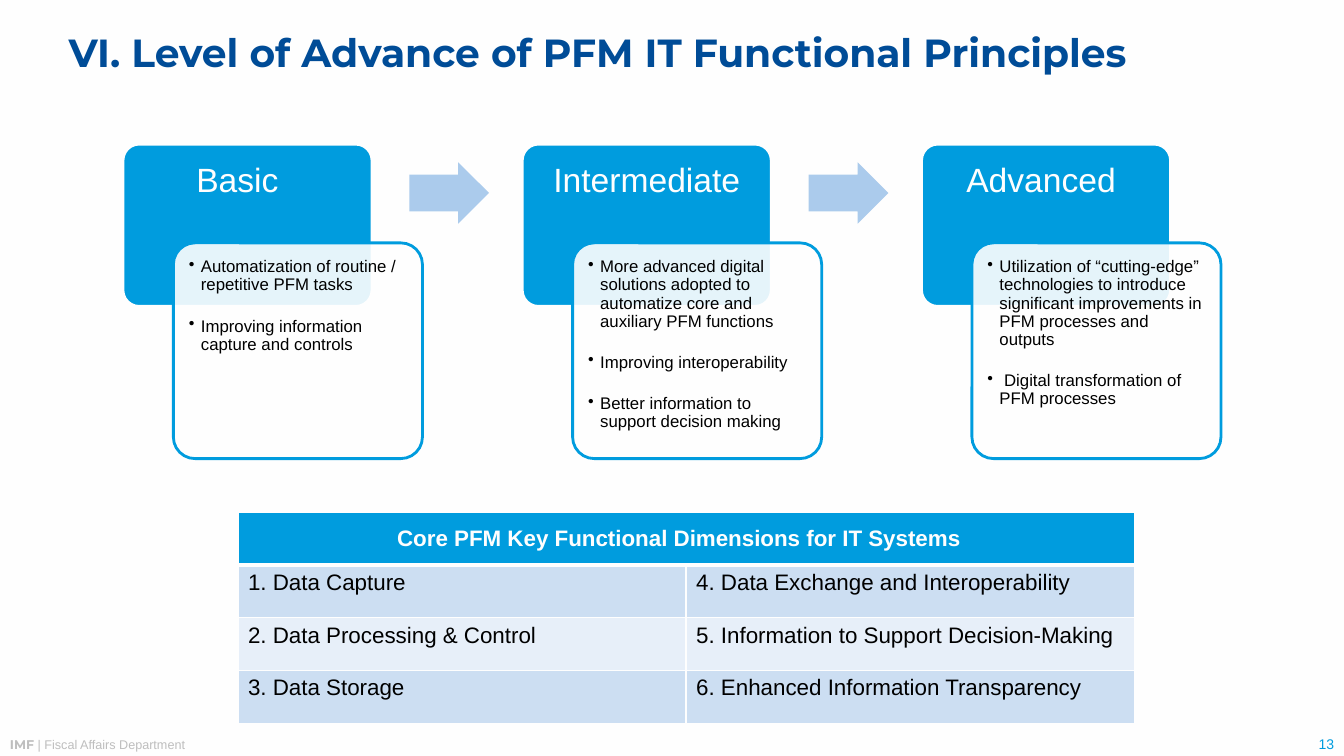
from pptx import Presentation
from pptx.dml.color import RGBColor
from pptx.enum import shapes, text
from pptx.oxml import parse_xml
from pptx.oxml.ns import nsdecls, qn
from pptx.util import Inches, Pt
from lxml import etree

NAVY = RGBColor(0x00, 0x4C, 0x97)
BLUE = RGBColor(0x00, 0x9C, 0xDE)
ARROW_BLUE = RGBColor(0xAB, 0xCB, 0xEC)
BAND_DARK = RGBColor(0xCC, 0xDE, 0xF2)
BAND_LIGHT = RGBColor(0xE7, 0xEF, 0xF9)
GRAY = RGBColor(0xBE, 0xBE, 0xBE)
WHITE = RGBColor(0xFE, 0xFE, 0xFE)
BLACK = RGBColor(0x00, 0x00, 0x00)

LEFT, PITCH = 1.22, 3.96
# Heading, extra right inset that shifts it off centre, bullets
LEVELS = [
    ("Basic", 0.2, [
        "Automatization of routine / repetitive PFM tasks",
        "Improving information capture and controls"]),
    ("Intermediate", 0, [
        "More advanced digital solutions adopted to automatize core and "
        "auxiliary PFM functions",
        "Improving interoperability",
        "Better information to support decision making"]),
    ("Advanced", 0.1, [
        "Utilization of “cutting-edge” technologies to introduce significant "
        "improvements in PFM processes and outputs",
        " Digital transformation of PFM processes"]),
]
TABLE_TITLE = "Core PFM Key Functional Dimensions for IT Systems"
DIMENSIONS = [
    ("1. Data Capture", "4. Data Exchange and Interoperability"),
    ("2. Data Processing & Control", "5. Information to Support Decision-Making"),
    ("3. Data Storage", "6. Enhanced Information Transparency"),
]


def add_run(p, words, size, color, bold=False, font="Arial"):
    r = p.add_run()
    r.text = words
    r.font.size, r.font.bold, r.font.name = Pt(size), bold, font
    r.font.color.rgb = color


def set_frame(tf, left, top, right, bottom, anchor=text.MSO_ANCHOR.TOP):
    tf.word_wrap = True
    tf.auto_size = text.MSO_AUTO_SIZE.NONE
    tf.vertical_anchor = anchor
    tf.margin_left, tf.margin_top = Inches(left), Inches(top)
    tf.margin_right, tf.margin_bottom = Inches(right), Inches(bottom)


def add_title(slide, words):
    title = slide.shapes.title
    title.left, title.top = Inches(0.68), Inches(0.01)
    title.width, title.height = Inches(11.88), Inches(1.07)
    set_frame(title.text_frame, 0, 0, 0, 0, text.MSO_ANCHOR.MIDDLE)
    p = title.text_frame.paragraphs[0]
    p.alignment, p.line_spacing = text.PP_ALIGN.LEFT, 0.9
    add_run(p, words, 28, NAVY, True, "Montserrat")


def add_block(slide, preset, box, fill, line=None):
    sp = slide.shapes.add_shape(preset, *map(Inches, box))
    sp.shadow.inherit = False
    sp.fill.solid()
    sp.fill.fore_color.rgb = fill
    if line is None:
        sp.line.fill.background()
    else:
        sp.line.color.rgb = line
        sp.line.width = Pt(2)
    return sp


def add_card(slide, box, fill, line):
    sp = add_block(slide, shapes.MSO_SHAPE.ROUNDED_RECTANGLE, box, fill, line)
    sp.adjustments[0] = 0.1
    return sp


def add_heading(slide, x, words, shift):
    sp = add_card(slide, (x, 1.43, 2.47, 1.61), BLUE, WHITE)
    set_frame(sp.text_frame, 0.14, 0.14, 0.14 + shift, 0.1)
    p = sp.text_frame.paragraphs[0]
    p.alignment, p.line_spacing = text.PP_ALIGN.CENTER, 0.9
    add_run(p, words, 24, WHITE)


def add_details(slide, x, bullets):
    sp = add_card(slide, (x, 2.41, 2.47, 2.14), WHITE, BLUE)
    color = sp.fill._xPr.find(qn("a:solidFill"))[0]
    etree.SubElement(color, qn("a:alpha")).set("val", "90000")
    tf = sp.text_frame
    set_frame(tf, 0.09, 0.09, 0.09, 0.09)
    for i, words in enumerate(bullets):
        p = tf.add_paragraph() if i else tf.paragraphs[0]
        p.alignment, p.line_spacing = text.PP_ALIGN.LEFT, 0.9
        p.space_after = Pt(16.5)
        pPr = p._p.get_or_add_pPr()
        pPr.set("marL", str(Inches(0.12)))
        pPr.set("indent", str(Inches(-0.12)))
        etree.SubElement(pPr, qn("a:buChar")).set("char", "•")
        add_run(p, words, 12, BLACK)


def add_arrow(slide, x):
    sp = add_block(slide, shapes.MSO_SHAPE.RIGHT_ARROW,
                   (x, 1.61, 0.79, 0.61), ARROW_BLUE)
    sp.adjustments[0], sp.adjustments[1] = 0.6, 0.5


def style_cell(cell, fill, top=1, bottom=1):
    """Fill the cell and draw its borders; top and bottom are in points."""
    cell.fill.solid()
    cell.fill.fore_color.rgb = fill
    tcPr = cell._tc.get_or_add_tcPr()
    widths = {"lnL": 1, "lnR": 1, "lnT": top, "lnB": bottom}
    for i, (tag, width) in enumerate(widths.items()):
        tcPr.insert(i, parse_xml(
            f'<a:{tag} {nsdecls("a")} w="{Pt(width)}"><a:solidFill>'
            f'<a:srgbClr val="{WHITE}"/></a:solidFill></a:{tag}>'))


def add_dimensions_table(slide):
    rows = len(DIMENSIONS) + 1
    frame = slide.shapes.add_table(rows, 2, Inches(2.36), Inches(5.08),
                                   Inches(8.89), Inches(2.1))
    table = frame.table
    header = table.cell(0, 0)
    header.merge(table.cell(0, 1))
    for cell in table.rows[0].cells:
        style_cell(cell, BLUE, bottom=3)
    header.vertical_anchor = text.MSO_ANCHOR.MIDDLE
    header.margin_right = Inches(0.24)
    p = header.text_frame.paragraphs[0]
    p.alignment = text.PP_ALIGN.CENTER
    add_run(p, TABLE_TITLE, 16, WHITE, True)
    for row, entries in enumerate(DIMENSIONS, 1):
        for col, words in enumerate(entries):
            cell = table.cell(row, col)
            style_cell(cell, BAND_DARK if row % 2 else BAND_LIGHT,
                       top=3 if row == 1 else 1)
            add_run(cell.text_frame.paragraphs[0], words, 16, BLACK)


def add_footer_text(slide, box, anchor, align):
    tf = slide.shapes.add_textbox(*map(Inches, box)).text_frame
    set_frame(tf, 0.1, 0.05, 0.1, 0.05, anchor)
    p = tf.paragraphs[0]
    p.alignment = align
    return p


def main():
    prs = Presentation()
    prs.slide_width, prs.slide_height = Inches(13.33), Inches(7.5)
    slide = prs.slides.add_slide(prs.slide_layouts[5])
    slide.background.fill.solid()
    slide.background.fill.fore_color.rgb = WHITE

    add_title(slide, "VI. Level of Advance of PFM IT Functional Principles")
    for i, (heading, shift, bullets) in enumerate(LEVELS):
        x = LEFT + i * PITCH
        add_heading(slide, x, heading, shift)
        add_details(slide, x + 0.5, bullets)
        if i < len(LEVELS) - 1:
            add_arrow(slide, x + 2.84)
    add_dimensions_table(slide)

    p = add_footer_text(slide, (0, 7.26, 10, 0.25),
                        text.MSO_ANCHOR.TOP, text.PP_ALIGN.LEFT)
    add_run(p, "IMF ", 9, GRAY, True, "Montserrat")
    add_run(p, "| Fiscal Affairs Department", 9, GRAY)
    p = add_footer_text(slide, (12.01, 7.24, 1.32, 0.27),
                        text.MSO_ANCHOR.BOTTOM, text.PP_ALIGN.RIGHT)
    add_run(p, "13", 10, BLUE)
    prs.save("out.pptx")


if __name__ == "__main__":
    main()
